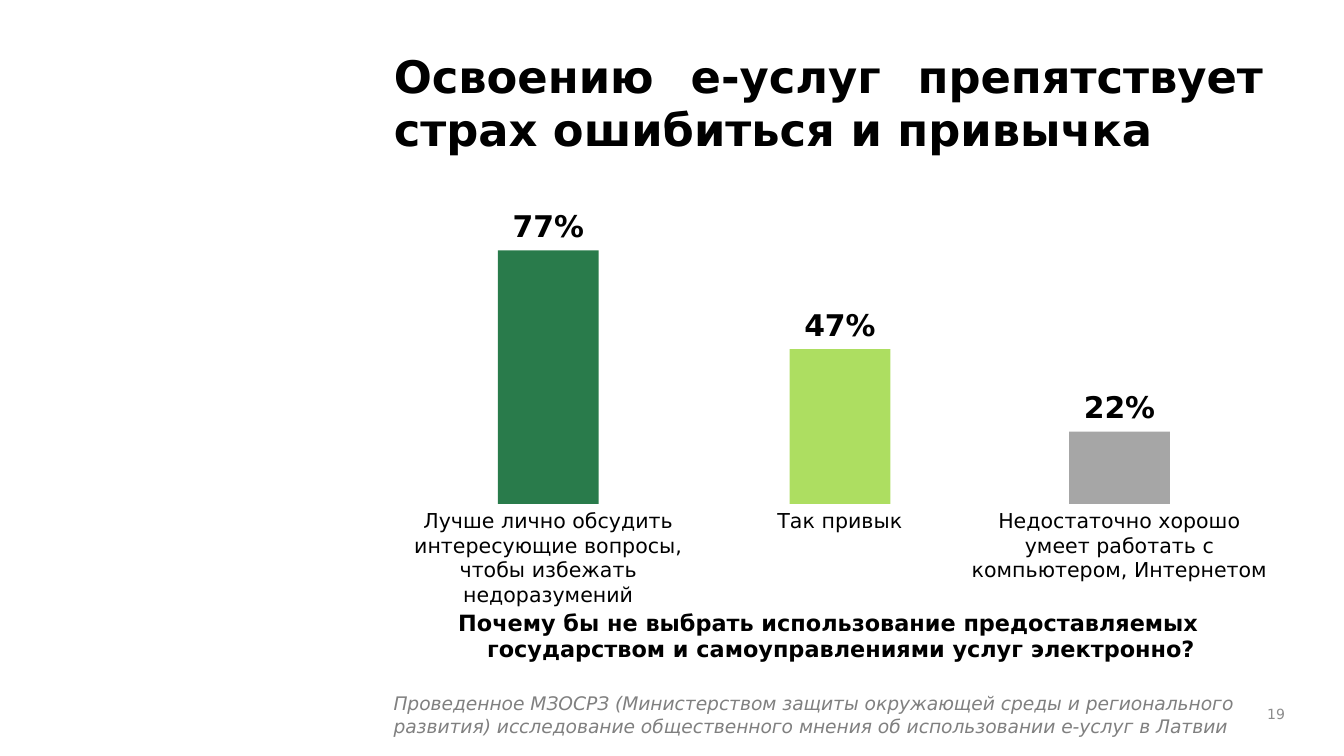
import dataclasses

import pptx
import pptx.dml.color
import pptx.enum.shapes
import pptx.enum.text
import pptx.util

Inches = pptx.util.Inches
ALIGN = pptx.enum.text.PP_ALIGN
ANCHOR = pptx.enum.text.MSO_ANCHOR
AUTO_SIZE = pptx.enum.text.MSO_AUTO_SIZE

FONT = "DejaVu Sans"
SLIDE_WIDTH = 10
SLIDE_HEIGHT = SLIDE_WIDTH * 9 / 16
CONTENT_LEFT, CONTENT_WIDTH = 2.83, 6.67
BASELINE = 3.75
BAR_WIDTH = 0.75
FULL_HEIGHT = 2.45  # height of a 100% column
VALUE_WIDTH, VALUE_HEIGHT = 0.67, 0.31


@dataclasses.dataclass
class Bar:
    label: str
    percent: int
    center: float
    label_width: float
    color: str


@dataclasses.dataclass
class Style:
    size: float
    color: str = "000000"
    bold: bool = False
    italic: bool = False
    align: ALIGN = ALIGN.CENTER


BARS = [
    Bar("Лучше лично обсудить интересующие вопросы, чтобы избежать недоразумений",
        77, 4.08, 2.5, "297B4B"),
    Bar("Так привык", 47, 6.25, 2.33, "ADDE61"),
    Bar("Недостаточно хорошо умеет работать с компьютером, Интернетом",
        22, 8.33, 2.33, "A6A6A6"),
]


def rgb(value: str) -> pptx.dml.color.RGBColor:
    return pptx.dml.color.RGBColor.from_string(value)


def write(shape, text: str, style: Style) -> None:
    """Fill a shape with one formatted paragraph."""
    shape.text_frame.word_wrap = True
    paragraph = shape.text_frame.paragraphs[0]
    paragraph.text = text
    paragraph.alignment = style.align
    font = paragraph.font
    font.name = FONT
    font.size = pptx.util.Pt(style.size)
    font.bold = style.bold
    font.italic = style.italic
    font.color.rgb = rgb(style.color)


def add_text(shapes, text: str, left: float, top: float, width: float, height: float,
             style: Style, side_inset: float = 0.1, end_inset: float = 0.05):
    box = shapes.add_textbox(Inches(left), Inches(top), Inches(width), Inches(height))
    frame = box.text_frame
    frame.margin_left = frame.margin_right = Inches(side_inset)
    frame.margin_top = frame.margin_bottom = Inches(end_inset)
    write(box, text, style)
    return box


def add_bar(slide, bar: Bar) -> None:
    """Draw a column with its value above and its answer below."""
    shapes = slide.shapes.add_group_shape().shapes
    height = FULL_HEIGHT * bar.percent / 100
    top = BASELINE - height

    add_text(shapes, bar.label, bar.center - bar.label_width / 2, BASELINE - 0.02,
             bar.label_width, 0.63, Style(11), side_inset=0)

    column = shapes.add_shape(
        pptx.enum.shapes.MSO_SHAPE.RECTANGLE, Inches(bar.center - BAR_WIDTH / 2),
        Inches(top), Inches(BAR_WIDTH), Inches(height))
    column.shadow.inherit = False
    column.fill.solid()
    column.fill.fore_color.rgb = rgb(bar.color)
    column.line.fill.background()

    add_text(shapes, f"{bar.percent}%", bar.center - VALUE_WIDTH / 2, top - 0.32,
             VALUE_WIDTH, VALUE_HEIGHT, Style(16, bold=True), side_inset=0, end_inset=0)


def main() -> None:
    presentation = pptx.Presentation()
    presentation.slide_width = Inches(SLIDE_WIDTH)
    presentation.slide_height = Inches(SLIDE_HEIGHT)
    slide = presentation.slides.add_slide(presentation.slide_layouts[5])

    # Title
    title = slide.shapes.title
    title.left, title.top = Inches(CONTENT_LEFT), Inches(0.31)
    title.width, title.height = Inches(CONTENT_WIDTH), Inches(1)
    title.text_frame.vertical_anchor = ANCHOR.TOP
    title.text_frame.auto_size = AUTO_SIZE.NONE
    write(title, "Освоению е-услуг препятствует страх ошибиться и привычка",
          Style(24, bold=True, align=ALIGN.JUSTIFY))

    # Page number
    number = add_text(slide.shapes, "19", 9.33, 5.19, 0.33, 0.25,
                      Style(7.5, color="8C8C8C", align=ALIGN.RIGHT))
    number.text_frame.margin_left = 0
    number.text_frame.vertical_anchor = ANCHOR.MIDDLE

    # Survey question with a hanging indent
    question = add_text(
        slide.shapes,
        "Почему бы не выбрать использование предоставляемых "
        "государством и самоуправлениями услуг электронно?",
        CONTENT_LEFT, 4.48, CONTENT_WIDTH, 0.42, Style(12, bold=True), side_inset=0)
    properties = question.text_frame.paragraphs[0]._p.get_or_add_pPr()
    properties.set("marL", str(Inches(0.19)))
    properties.set("indent", str(Inches(-0.19)))

    # Source note
    note = add_text(
        slide.shapes,
        "Проведенное МЗОСРЗ (Министерством защиты окружающей среды и регионального "
        "развития) исследование общественного мнения об использовании е-услуг в Латвии",
        CONTENT_LEFT, 5.1, CONTENT_WIDTH, 0.44,
        Style(10, color="808080", italic=True, align=ALIGN.LEFT))
    note.text_frame.auto_size = AUTO_SIZE.SHAPE_TO_FIT_TEXT

    # Survey answers
    for bar in BARS:
        add_bar(slide, bar)

    presentation.save("out.pptx")


if __name__ == "__main__":
    main()
